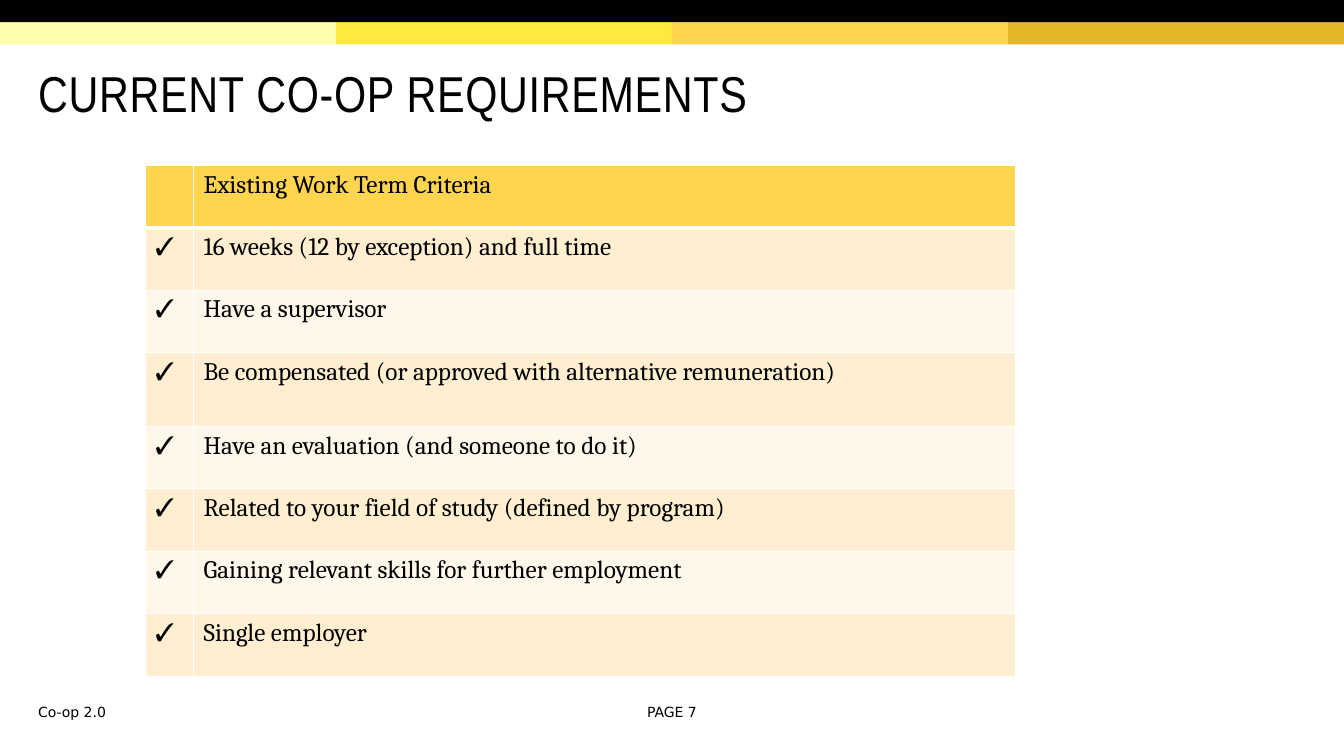
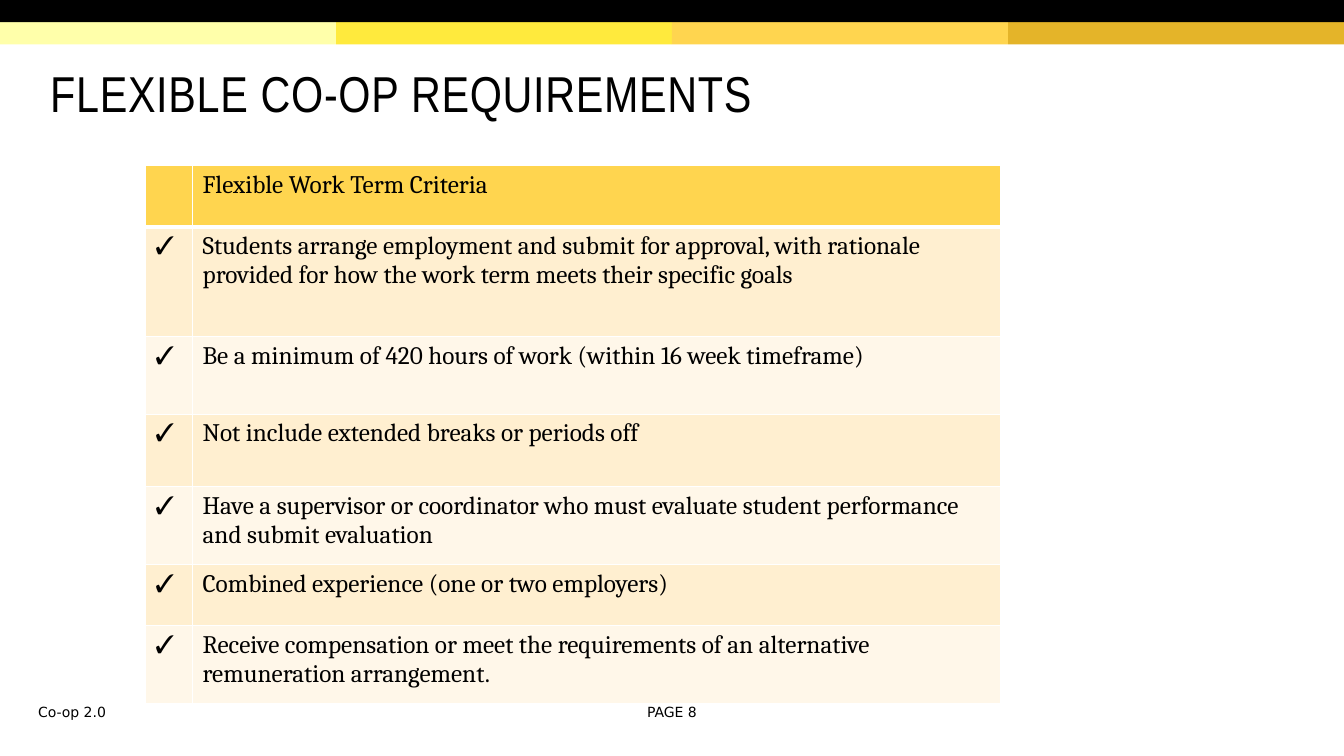
from lxml.etree import SubElement
from pptx import Presentation
from pptx.dml.color import RGBColor
from pptx.enum.shapes import MSO_SHAPE
from pptx.enum.text import MSO_ANCHOR, PP_ALIGN
from pptx.oxml.ns import qn
from pptx.util import Inches, Pt

BLACK = RGBColor(0x00, 0x00, 0x00)
GOLD = RGBColor(0xFF, 0xD5, 0x4F)
BAND_COLORS = [RGBColor(0xFF, 0xFF, 0xAA), RGBColor(0xFF, 0xEA, 0x3D),
               GOLD, RGBColor(0xE4, 0xB4, 0x29)]
ROW_COLORS = [RGBColor(0xFF, 0xEF, 0xD0), RGBColor(0xFF, 0xF7, 0xE9)]
BORDER_HEX = "FFFFFF"

TITLE_FONT, BODY_FONT, FOOTER_FONT = "Arial Narrow", "Cambria", "DejaVu Sans"
SLIDE_W, SLIDE_H = 13.33, 7.5
BAND_H = 0.22
MARGIN = 0.28
FOOTER_TOP, FOOTER_H = 6.93, 0.27
TABLE_LEFT, TABLE_TOP = 1.44, 1.64
CHECK = "✓"


def style_runs(p, font, size):
    for r in p.runs:
        r.font.name = font
        r.font.size = Pt(size)
        r.font.color.rgb = BLACK


def add_bar(slide, left, top, width, color):
    sp = slide.shapes.add_shape(MSO_SHAPE.RECTANGLE, Inches(left), Inches(top),
                                Inches(width), Inches(BAND_H))
    sp.shadow.inherit = False
    sp.fill.solid()
    sp.fill.fore_color.rgb = color
    sp.line.fill.background()


def add_bands(slide):
    """Draw the black bar and the row of yellow bars below it."""
    width = SLIDE_W / len(BAND_COLORS)
    for i, color in enumerate(BAND_COLORS):
        add_bar(slide, i * width, BAND_H, width, color)
    add_bar(slide, 0, 0, SLIDE_W, BLACK)


def add_text(slide, text, box, font, size, align=PP_ALIGN.LEFT):
    """Add a vertically centred line of text and return its paragraph."""
    tf = slide.shapes.add_textbox(*map(Inches, box)).text_frame
    tf.word_wrap = True
    tf.vertical_anchor = MSO_ANCHOR.MIDDLE
    p = tf.paragraphs[0]
    p.text = text
    p.alignment = align
    style_runs(p, font, size)
    return p


def add_title(slide, text, indent):
    box = (MARGIN + indent, 0.47, 12.65 - indent, 0.98)
    p = add_text(slide, text, box, TITLE_FONT, 36)
    p.line_spacing = 0.85
    p.runs[0].font._element.set("spc", "50")


def add_footer(slide, page):
    add_text(slide, "Co-op 2.0", (MARGIN, FOOTER_TOP, 5.72, FOOTER_H),
             FOOTER_FONT, 10)
    add_text(slide, f"PAGE {page}", (6.11, FOOTER_TOP, 1.11, FOOTER_H),
             FOOTER_FONT, 10, PP_ALIGN.CENTER)


def set_borders(cell, bottom):
    """Give the cell 1 pt borders, with its own width at the bottom."""
    tc_pr = cell._tc.get_or_add_tcPr()
    for tag, width in (("lnL", 1), ("lnR", 1), ("lnT", 1), ("lnB", bottom)):
        ln = SubElement(tc_pr, qn(f"a:{tag}"), w=str(Pt(width)))
        fill = SubElement(ln, qn("a:solidFill"))
        SubElement(fill, qn("a:srgbClr"), val=BORDER_HEX)


def fill_cell(cell, text, color, bottom):
    set_borders(cell, bottom)
    cell.fill.solid()
    cell.fill.fore_color.rgb = color
    p = cell.text_frame.paragraphs[0]
    if text:
        p.text = text
        style_runs(p, BODY_FONT, 18)


def add_checklist(slide, left, top, widths, heights, heading, criteria):
    """Add a table with a heading row and one ticked row per criterion."""
    rows = [("", heading)] + [(CHECK, item) for item in criteria]
    table = slide.shapes.add_table(
        len(rows), len(widths), Inches(left), Inches(top),
        Inches(sum(widths)), Inches(sum(heights))).table
    table.first_row = False
    table.horz_banding = False
    for column, width in zip(table.columns, widths):
        column.width = Inches(width)
    for i, (row, height, texts) in enumerate(zip(table.rows, heights, rows)):
        row.height = Inches(height)
        color = ROW_COLORS[(i - 1) % 2] if i else GOLD
        for cell, text in zip(row.cells, texts):
            fill_cell(cell, text, color, bottom=1 if i else 3)


def add_criteria_slide(prs, page, title, widths, heights, heading, criteria,
                       title_indent=0):
    slide = prs.slides.add_slide(prs.slide_layouts[6])
    add_bands(slide)
    add_title(slide, title, title_indent)
    add_checklist(slide, TABLE_LEFT, TABLE_TOP, widths, heights, heading,
                  criteria)
    add_footer(slide, page)


def main():
    prs = Presentation()
    prs.slide_width, prs.slide_height = Inches(SLIDE_W), Inches(SLIDE_H)
    add_criteria_slide(
        prs, 7, "CURRENT CO-OP REQUIREMENTS",
        widths=[0.48, 8.15],
        heights=[0.62] * 3 + [0.73] + [0.62] * 4,
        heading="Existing Work Term Criteria",
        criteria=[
            "16 weeks (12 by exception) and full time",
            "Have a supervisor",
            "Be compensated (or approved with alternative remuneration)",
            "Have an evaluation (and someone to do it)",
            "Related to your field of study (defined by program)",
            "Gaining relevant skills for further employment",
            "Single employer",
        ])
    add_criteria_slide(
        prs, 8, "FLEXIBLE CO-OP REQUIREMENTS",
        widths=[0.47, 8.01],
        heights=[0.61, 1.09, 0.77, 0.72, 0.77, 0.61, 0.77],
        heading="Flexible Work Term Criteria",
        criteria=[
            "Students arrange employment and submit for approval, with "
            "rationale provided for how the work term meets their specific "
            "goals",
            "Be a minimum of 420 hours of work (within 16 week timeframe)",
            "Not include extended breaks or periods off",
            "Have a supervisor or coordinator who must evaluate student "
            "performance and submit evaluation",
            "Combined experience (one or two employers)",
            "Receive compensation or meet the requirements of an alternative "
            "remuneration arrangement.",
        ],
        title_indent=0.12)
    prs.save("out.pptx")


if __name__ == "__main__":
    main()
